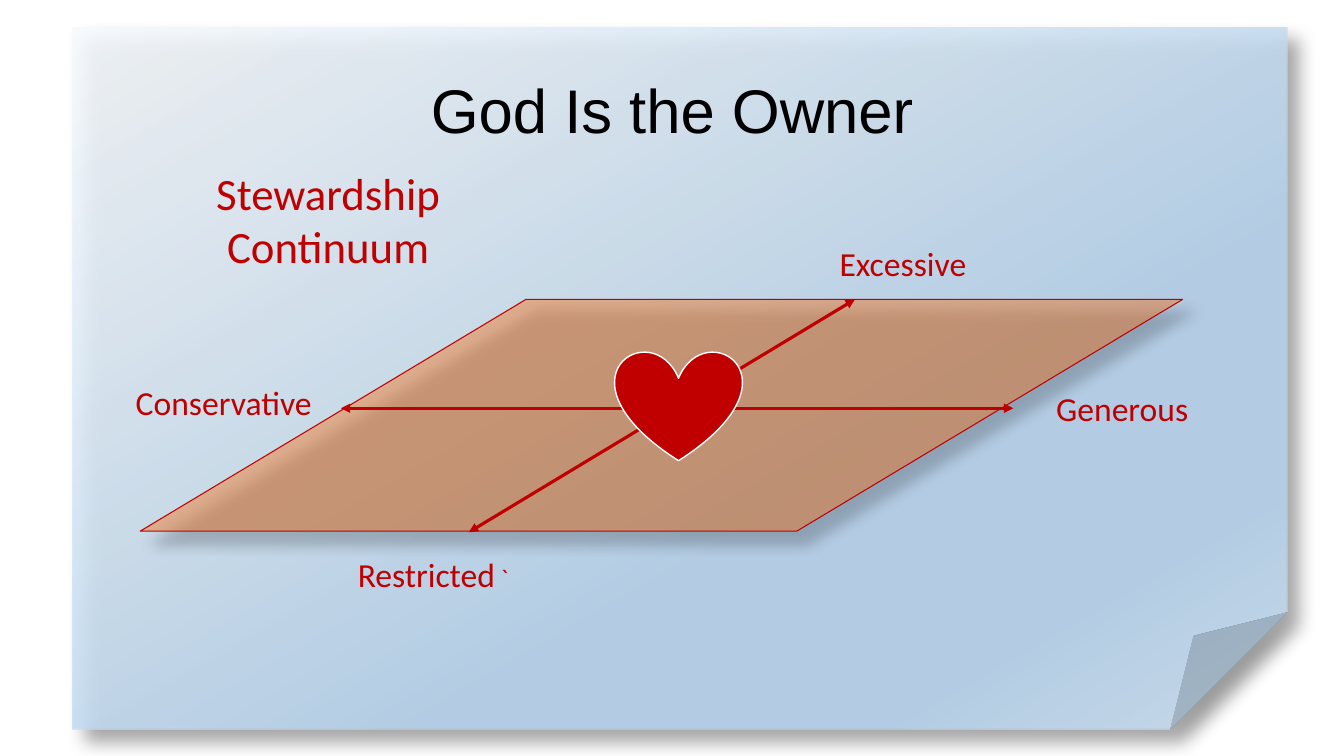
"""Build the stewardship continuum slide."""
from lxml import etree
from pptx import Presentation
from pptx.dml.color import RGBColor
from pptx.enum.shapes import MSO_CONNECTOR, MSO_SHAPE
from pptx.enum.text import MSO_ANCHOR, MSO_AUTO_SIZE, PP_ALIGN
from pptx.oxml.ns import qn
from pptx.util import Pt

FOLDED_PAGE = MSO_SHAPE.FOLDED_CORNER
PARALLELOGRAM = MSO_SHAPE.PARALLELOGRAM
HEART = MSO_SHAPE.HEART
STRAIGHT = MSO_CONNECTOR.STRAIGHT
CENTER = PP_ALIGN.CENTER
TOP = MSO_ANCHOR.TOP
MIDDLE = MSO_ANCHOR.MIDDLE
GROW = MSO_AUTO_SIZE.SHAPE_TO_FIT_TEXT
FIXED = MSO_AUTO_SIZE.NONE

EMU_PER_PX = 9144
COLORS = {
    "red": "C00000",
    "orange": "ED7D31",
    "black": "000000",
    "white": "FFFFFF",
    "ice": "F7FAFD",
    "sky": "B5D2EC",
    "mist": "CEE1F2",
}


def px(length):
    """Turn pixels into EMU."""
    return length * EMU_PER_PX


def add_xml(parent, tag, **attributes):
    """Append a DrawingML element and return it."""
    values = {name: str(value) for name, value in attributes.items()}
    return etree.SubElement(parent, qn(f"a:{tag}"), values)


def add_color(parent, color, opacity):
    """Append a colour with an opacity in percent."""
    value = add_xml(parent, "srgbClr", val=COLORS[color])
    add_xml(value, "alpha", val=opacity * 1000)


class ContinuumSlide:
    """Hold the style and the current slide."""

    def __init__(self, presentation):
        self.slide = presentation.slides.add_slide(presentation.slide_layouts[6])
        self.font = "Calibri"

    def color(self, name):
        return RGBColor.from_string(COLORS[name])

    def shape(self, kind, box, fill=None, line=None, width=1):
        shape = self.slide.shapes.add_shape(kind, *map(px, box))
        shape.shadow.inherit = False
        if fill:
            shape.fill.solid()
            shape.fill.fore_color.rgb = self.color(fill)
        if line:
            shape.line.color.rgb = self.color(line)
            shape.line.width = Pt(width)
        else:
            shape.line.fill.background()
        return shape

    def opacity(self, shape, percent):
        solid = shape.element.spPr.find(qn("a:solidFill"))
        add_xml(solid[0], "alpha", val=percent * 1000)

    def gradient(self, shape, stops, angle, opacity):
        shape.fill.gradient()
        shape.fill.gradient_angle = 360 - angle
        stop_list = shape.element.spPr.find(qn("a:gradFill")).find(qn("a:gsLst"))
        for old_stop in list(stop_list):
            stop_list.remove(old_stop)
        for position, color in stops:
            stop = add_xml(stop_list, "gs", pos=position * 1000)
            add_color(stop, color, opacity)

    def shadow(self, shape, blur, distance):
        effects = shape.element.spPr.find(qn("a:effectLst"))
        outer = add_xml(effects, "outerShdw", blurRad=px(blur), dist=px(distance),
                        dir=45 * 60000, algn="tl", rotWithShape=0)
        add_color(outer, "black", 40)

    def arrow(self, start, end):
        arrow = self.slide.shapes.add_connector(STRAIGHT, *map(px, start + end))
        arrow.line.color.rgb = self.color("red")
        arrow.line.width = Pt(2.25)
        line = arrow.line._get_or_add_ln()
        for tip in ("headEnd", "tailEnd"):
            add_xml(line, tip, type="triangle")
        add_xml(arrow.element.spPr, "effectLst")

    def text(self, box, runs, color="red", font=None, anchor=TOP, fit=GROW, spacing=1.0):
        frame = self.slide.shapes.add_textbox(*map(px, box)).text_frame
        frame.word_wrap = True
        frame.auto_size = fit
        frame.vertical_anchor = anchor
        paragraph = frame.paragraphs[0]
        paragraph.alignment = CENTER
        paragraph.line_spacing = spacing
        for words, size in runs:
            run = paragraph.add_run()
            run.text = words
            run.font.name = font or self.font
            run.font.size = Pt(size)
            run.font.color.rgb = self.color(color)


def main():
    """Draw the slide and save it."""
    presentation = Presentation()
    presentation.slide_width, presentation.slide_height = px(1333), px(750)
    slide = ContinuumSlide(presentation)

    page = slide.shape(FOLDED_PAGE, (72, 27, 1205, 697))
    slide.gradient(page, [(0, "ice"), (64, "sky"), (83, "sky"), (100, "mist")], 60, 87)
    slide.shadow(page, 18, 18)

    plane = slide.shape(PARALLELOGRAM, (139, 297, 1034, 230), "orange", "red", 0.75)
    plane.adjustments[0] = 1.664
    slide.opacity(plane, 50)
    slide.shadow(plane, 14, 15)

    slide.arrow((465, 528), (848, 297))
    slide.arrow((338, 405), (1005, 405))

    slide.text((92, 40, 1150, 145), [("God Is the Owner", 44)], "black", "Arial",
               MIDDLE, FIXED, 0.9)
    slide.text((155, 159, 341, 118), [("Stewardship Continuum", 32)])
    for box, runs in (
        ((804, 236, 183, 50), [("Excessive", 24)]),
        ((326, 545, 207, 50), [("Restricted", 24), (" `", 18)]),
        ((103, 374, 244, 50), [("Conservative", 24), (" ", 20)]),
        ((1029, 380, 168, 50), [("Generous", 24)]),
    ):
        slide.text(box, runs)

    slide.shape(HEART, (610, 348, 126, 109), "red", "white")
    presentation.save("out.pptx")


if __name__ == "__main__":
    main()
